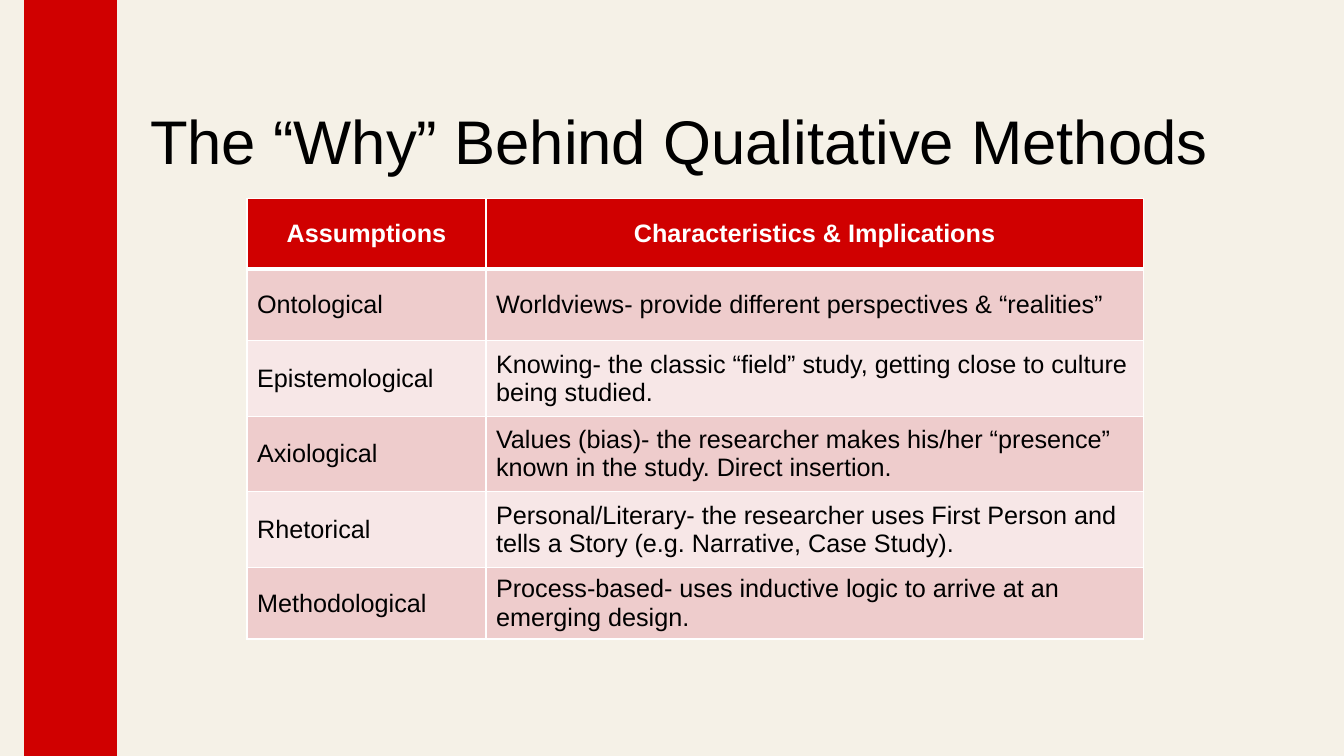
"""Build the slide on the assumptions behind qualitative methods."""
from lxml import etree
from pptx import Presentation
from pptx.dml.color import RGBColor
from pptx.enum.shapes import MSO_SHAPE
from pptx.enum.text import MSO_ANCHOR, PP_ALIGN
from pptx.oxml.ns import qn
from pptx.util import Inches, Pt

RECT = MSO_SHAPE.RECTANGLE
MIDDLE = MSO_ANCHOR.MIDDLE
LEFT, CENTER = PP_ALIGN.LEFT, PP_ALIGN.CENTER

TITLE = "The “Why” Behind Qualitative Methods"
ROWS = [
    ("Assumptions", "Characteristics & Implications"),
    ("Ontological", "Worldviews- provide different perspectives & “realities”"),
    ("Epistemological", "Knowing- the classic “field” study, getting close to culture being studied."),
    ("Axiological", "Values (bias)- the researcher makes his/her “presence” known in the study. Direct insertion."),
    ("Rhetorical", "Personal/Literary- the researcher uses First Person and tells a Story (e.g. Narrative, Case Study)."),
    ("Methodological", "Process-based- uses inductive logic to arrive at an emerging design."),
]

THEME = {
    "font": "Arial", "paper": "F5F1E7", "accent": "D00000", "ink": "000000",
    "white": "FFFFFF", "bands": ("F7E7E7", "EECCCC"),
    "title_size": 44, "table_size": 18, "rule": 1, "header_rule": 3,
}
SLIDE_W, SLIDE_H = 13.33, 7.5
BAND_BOX = (0.24, 0, 0.92, SLIDE_H)
TITLE_BOX = (1.39, 0.58, 11.02, 1.7)
TABLE_AT = (2.45, 1.97)
COL_WIDTHS = (2.37, 6.52)
ROW_HEIGHTS = (0.7, 0.71, 0.75, 0.75, 0.75, 0.71)


def inches(values):
    return [Inches(v) for v in values]


def paint(fill, color):
    fill.solid()
    fill.fore_color.rgb = RGBColor.from_string(color)


def write(tf, text, size, color, bold=False, align=LEFT):
    p = tf.paragraphs[0]
    p.alignment = align
    r = p.add_run()
    r.text = text
    style = {"name": THEME["font"], "size": Pt(size), "bold": bold}
    for key, value in style.items():
        setattr(r.font, key, value)
    r.font.color.rgb = RGBColor.from_string(color)
    return p


def set_borders(cell, widths):
    tc_pr = cell._tc.get_or_add_tcPr()
    for side, width in widths.items():
        ln = etree.SubElement(tc_pr, qn(f"a:ln{side}"), w=str(Pt(width)))
        solid = etree.SubElement(ln, qn("a:solidFill"))
        etree.SubElement(solid, qn("a:srgbClr"), val=THEME["white"])


def add_title(s):
    tf = s.shapes.add_textbox(*inches(TITLE_BOX)).text_frame
    tf.word_wrap = True
    tf.vertical_anchor = MIDDLE
    write(tf, TITLE, THEME["title_size"], THEME["ink"]).line_spacing = 0.9


def add_assumptions_table(s):
    size = (sum(COL_WIDTHS), sum(ROW_HEIGHTS))
    table = s.shapes.add_table(len(ROWS), len(COL_WIDTHS), *inches(TABLE_AT + size)).table
    for col, width in zip(table.columns, inches(COL_WIDTHS)):
        col.width = width
    for row, height in zip(table.rows, inches(ROW_HEIGHTS)):
        row.height = height
    for i, texts in enumerate(ROWS):
        header = i == 0
        fill = THEME["accent"] if header else THEME["bands"][i % 2]
        color = THEME["white"] if header else THEME["ink"]
        widths = dict.fromkeys("LRTB", THEME["rule"])
        if header:
            widths["B"] = THEME["header_rule"]
        elif i == 1:
            widths["T"] = THEME["header_rule"]
        for j, text in enumerate(texts):
            cell = table.cell(i, j)
            cell.vertical_anchor = MIDDLE
            set_borders(cell, widths)
            paint(cell.fill, fill)
            write(cell.text_frame, text, THEME["table_size"], color,
                  header, CENTER if header else LEFT)


def main():
    prs = Presentation()
    prs.slide_width, prs.slide_height = inches((SLIDE_W, SLIDE_H))
    s = prs.slides.add_slide(prs.slide_layouts[6])
    paint(s.background.fill, THEME["paper"])
    band = s.shapes.add_shape(RECT, *inches(BAND_BOX))
    band.shadow.inherit = False
    paint(band.fill, THEME["accent"])
    band.line.fill.background()
    add_title(s)
    add_assumptions_table(s)
    prs.save("out.pptx")


if __name__ == "__main__":
    main()
